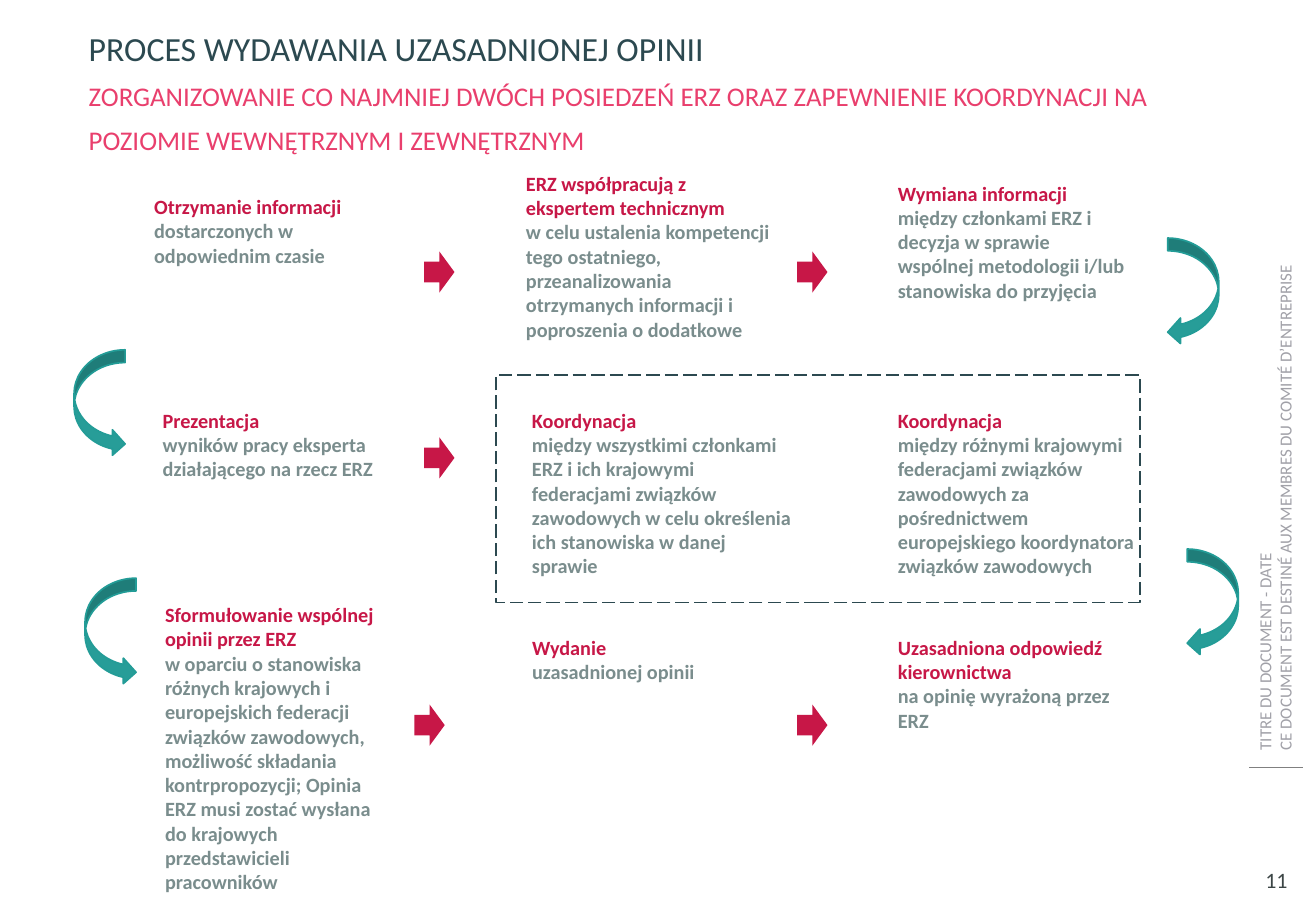
"""Build the slide on the process of issuing a reasoned opinion."""
from pptx import Presentation
from pptx.dml.color import RGBColor
from pptx.enum import dml, shapes, text
from pptx.oxml import ns, xmlchemy
from pptx.util import Inches, Pt

COLORS = {
    "dark": "2C4950", "pink": "E93F6D", "red": "C71747", "grey": "7A8D8D",
    "teal": "279D98", "teal_edge": "239C97", "footer": "A1A1A8",
    "number": "3C4646", "rule": "808080",
}


def rgb(name):
    return RGBColor.from_string(COLORS[name])


def fill_lines(paragraph, heading, heading_color, detail, detail_color):
    """Write a heading and its detail on the next line; return both runs."""
    heading_run = paragraph.add_run()
    heading_run.text = heading
    heading_run.font.color.rgb = rgb(heading_color)
    paragraph.add_line_break()
    detail_run = paragraph.add_run()
    detail_run.text = detail
    detail_run.font.color.rgb = rgb(detail_color)
    return heading_run, detail_run


prs = Presentation()
prs.slide_width, prs.slide_height = Inches(10.83), Inches(7.5)
slide = prs.slides.add_slide(prs.slide_layouts[5])

page_number = slide.shapes.add_textbox(Inches(10.21), Inches(6.97), Inches(0.59), Inches(0.55))
page_number.text_frame.vertical_anchor = text.MSO_ANCHOR.MIDDLE
page_number.text_frame.word_wrap = True
number = page_number.text_frame.paragraphs[0]
number.text = "11"
number.alignment = text.PP_ALIGN.CENTER
number.font.name, number.font.size = "Calibri", Pt(13)
number.font.color.rgb = rgb("number")

footer = slide.shapes.add_textbox(Inches(7.77), Inches(3.32), Inches(5.46), Inches(0.45))
footer.rotation = 270
footer.text_frame.word_wrap = True
footer.text_frame.text = (
    "TITRE DU DOCUMENT - DATE\n"
    "CE DOCUMENT EST DESTINÉ AUX MEMBRES DU COMITÉ D’ENTREPRISE"
)
for footer_line in footer.text_frame.paragraphs:
    footer_line.font.name, footer_line.font.size = "Calibri", Pt(10)
    footer_line.font.color.rgb = rgb("footer")

rule = slide.shapes.add_connector(
    shapes.MSO_CONNECTOR.STRAIGHT, Inches(10.28), Inches(6.32), Inches(10.72), Inches(6.32))
rule.line.color.rgb = rgb("rule")
rule.line.width = Pt(0.75)
rule._element.spPr.append(xmlchemy.OxmlElement("a:effectLst"))

title = slide.shapes.title
title.left, title.top = Inches(0.63), Inches(0.2)
title.width, title.height = Inches(9.45), Inches(1.08)
title.text_frame.vertical_anchor = text.MSO_ANCHOR.MIDDLE
title.text_frame.auto_size = text.MSO_AUTO_SIZE.NONE
headline = title.text_frame.paragraphs[0]
headline.alignment = text.PP_ALIGN.LEFT
headline.line_spacing = Pt(26)
headline.font.name, headline.font.size = "Calibri", Pt(20)
main_run, subtitle_run = fill_lines(
    headline, "PROCES WYDAWANIA UZASADNIONEJ OPINII", "dark",
    "ZORGANIZOWANIE CO NAJMNIEJ DWÓCH POSIEDZEŃ ERZ ORAZ ZAPEWNIENIE "
    "KOORDYNACJI NA POZIOMIE WEWNĘTRZNYM I ZEWNĘTRZNYM", "pink")
main_run.font.size, subtitle_run.font.size = Pt(20), Pt(16)
for line_break in headline._p.findall(ns.qn("a:br")):
    break_format = xmlchemy.OxmlElement("a:rPr")
    break_format.set("sz", "2000")
    line_break.append(break_format)

steps = [
    (1.17, 1.55, 2.09, "Otrzymanie informacji", "dostarczonych w odpowiednim czasie"),
    (4.23, 1.36, 2.24, "ERZ współpracują z ekspertem technicznym",
     "w celu ustalenia kompetencji tego ostatniego, przeanalizowania "
     "otrzymanych informacji i poproszenia o dodatkowe"),
    (7.29, 1.44, 2.09, "Wymiana informacji",
     "między członkami ERZ i decyzja w sprawie wspólnej metodologii i/lub "
     "stanowiska do przyjęcia"),
    (4.28, 3.31, 2.36, "Koordynacja",
     "między wszystkimi członkami ERZ i ich krajowymi federacjami związków "
     "zawodowych w celu określenia ich stanowiska w danej sprawie"),
    (7.29, 3.31, 2.21, "Koordynacja",
     "między różnymi krajowymi federacjami związków zawodowych za pośrednictwem "
     "europejskiego koordynatora związków zawodowych"),
    (1.24, 3.31, 2.09, "Prezentacja", "wyników pracy eksperta działającego na rzecz ERZ"),
    (1.26, 4.91, 2.09, "Sformułowanie wspólnej opinii przez ERZ",
     "w oparciu o stanowiska różnych krajowych i europejskich federacji związków "
     "zawodowych, możliwość składania kontrpropozycji; Opinia ERZ musi zostać "
     "wysłana do krajowych przedstawicieli pracowników"),
    (4.28, 5.18, 2.09, "Wydanie", "uzasadnionej opinii"),
    (7.29, 5.18, 2.09, "Uzasadniona odpowiedź kierownictwa", "na opinię wyrażoną przez ERZ"),
]
for left, top, width, heading, detail in steps:
    step = slide.shapes.add_textbox(Inches(left), Inches(top), Inches(width), Inches(1.77))
    step.text_frame.word_wrap = True
    paragraph = step.text_frame.paragraphs[0]
    paragraph.font.name, paragraph.font.size = "Calibri", Pt(12)
    paragraph.font.bold = True
    fill_lines(paragraph, heading, "red", detail, "grey")

for left, top in [(3.49, 2.07), (6.56, 2.07), (3.41, 5.8), (6.56, 5.8), (3.49, 3.6)]:
    arrow = slide.shapes.add_shape(
        shapes.MSO_SHAPE.RIGHT_ARROW, Inches(left), Inches(top), Inches(0.25), Inches(0.34))
    arrow.shadow.inherit = False
    arrow.fill.solid()
    arrow.fill.fore_color.rgb = rgb("red")
    arrow.line.fill.background()

coordination = slide.shapes.add_shape(
    shapes.MSO_SHAPE.RECTANGLE, Inches(4.08), Inches(3.09), Inches(5.3), Inches(1.87))
coordination.shadow.inherit = False
coordination.fill.background()
coordination.line.color.rgb = rgb("dark")
coordination.line.width = Pt(1)
coordination.line.dash_style = dml.MSO_LINE.LONG_DASH

for left, top, flipped in [
        (9.61, 1.96, False), (0.61, 2.88, True), (9.77, 4.52, False), (0.7, 4.76, True)]:
    turn = slide.shapes.add_shape(
        shapes.MSO_SHAPE.CURVED_LEFT_ARROW,
        Inches(left), Inches(top), Inches(0.42), Inches(0.88))
    turn.shadow.inherit = False
    turn.fill.solid()
    turn.fill.fore_color.rgb = rgb("teal")
    turn.line.color.rgb = rgb("teal_edge")
    turn.line.width = Pt(1)
    if flipped:
        turn._element.spPr.xfrm.set("flipH", "1")

prs.save("out.pptx")
